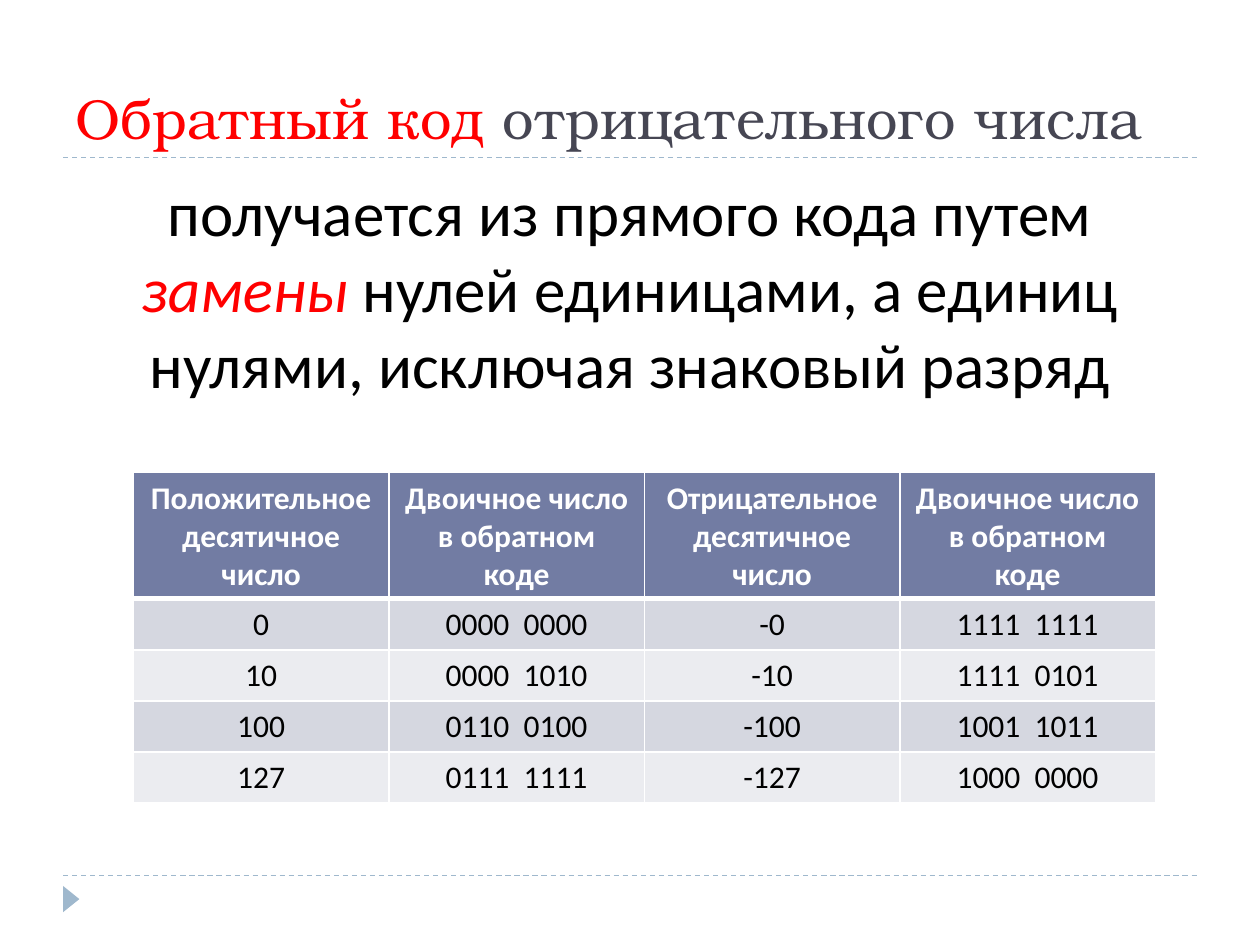
from dataclasses import dataclass

from lxml.etree import SubElement
from pptx import Presentation
from pptx.dml.color import RGBColor
from pptx.enum.dml import MSO_LINE
from pptx.enum.shapes import MSO_CONNECTOR, MSO_SHAPE
from pptx.enum.text import MSO_ANCHOR, MSO_AUTO_SIZE, PP_ALIGN
from pptx.oxml.ns import qn
from pptx.util import Cm, Pt


@dataclass(frozen=True)
class Theme:
    title_font: str = "TeX Gyre Bonum"
    body_font: str = "Calibri"
    title_size: int = 32
    body_size: int = 36
    table_size: int = 18
    title: str = "464653"
    text: str = "000000"
    accent: str = "FF0000"
    rule: str = "9FB8CD"
    header: str = "727CA3"
    bands: tuple = ("D5D7E0", "EBECF0")
    white: str = "FFFFFF"


THEME = Theme()
LEFT, WIDTH = 1.27, 22.86

HEADERS = [
    "Положительное десятичное число",
    "Двоичное число в обратном коде",
    "Отрицательное десятичное число",
    "Двоичное число в обратном коде",
]
ROWS = [
    ["0", "0000  0000", "-0", "1111  1111"],
    ["10", "0000  1010", "-10", "1111  0101"],
    ["100", "0110  0100", "-100", "1001  1011"],
    ["127", "0111  1111", "-127", "1000  0000"],
]


def add_text(p, text, *, size, color=THEME.text, font=THEME.body_font,
             bold=False, italic=False):
    r = p.add_run()
    r.text = text
    r.font.name = font
    r.font.size = Pt(size)
    r.font.bold = bold
    r.font.italic = italic
    r.font.color.rgb = RGBColor.from_string(color)


def set_fill(fill, color):
    fill.solid()
    fill.fore_color.rgb = RGBColor.from_string(color)


def add_rule(slide, y):
    """Draw a dashed horizontal line across the content width."""
    line = slide.shapes.add_connector(
        MSO_CONNECTOR.STRAIGHT, Cm(LEFT), Cm(y), Cm(LEFT + WIDTH), Cm(y))
    line.line.color.rgb = RGBColor.from_string(THEME.rule)
    line.line.width = Pt(0.75)
    line.line.dash_style = MSO_LINE.DASH
    SubElement(line._element.spPr, qn("a:effectLst"))


def add_marker(slide):
    sp = slide.shapes.add_shape(
        MSO_SHAPE.ISOSCELES_TRIANGLE, Cm(1.17), Cm(17.96), Cm(0.53), Cm(0.33))
    sp.rotation = 90
    sp.shadow.inherit = False
    set_fill(sp.fill, THEME.rule)
    sp.line.fill.background()


def add_title(slide):
    sp = slide.shapes.title
    sp.left, sp.top, sp.width, sp.height = Cm(LEFT), Cm(0.43), Cm(WIDTH), Cm(2.74)
    tf = sp.text_frame
    tf.auto_size = MSO_AUTO_SIZE.NONE
    tf.vertical_anchor = MSO_ANCHOR.BOTTOM
    p = tf.paragraphs[0]
    p.alignment = PP_ALIGN.LEFT
    for text, color in (("Обратный код ", THEME.accent),
                        ("отрицательного числа", THEME.title)):
        add_text(p, text, size=THEME.title_size, color=color, font=THEME.title_font)


def add_definition(slide):
    sp = slide.shapes.add_textbox(Cm(LEFT), Cm(3.38), Cm(WIDTH), Cm(13.72))
    tf = sp.text_frame
    tf.word_wrap = True
    p = tf.paragraphs[0]
    p.alignment = PP_ALIGN.CENTER
    p.space_before = Pt(6)
    size = THEME.body_size
    add_text(p, "получается из прямого кода путем ", size=size)
    add_text(p, "замены", size=size, color=THEME.accent, italic=True)
    add_text(p, " нулей единицами, а единиц нулями, исключая знаковый разряд",
             size=size)


def set_borders(cell, bottom=1, top=1):
    tc_pr = cell._tc.get_or_add_tcPr()
    for side, width in (("L", 1), ("R", 1), ("T", top), ("B", bottom)):
        ln = SubElement(tc_pr, qn(f"a:ln{side}"), w=str(Pt(width)))
        fill = SubElement(ln, qn("a:solidFill"))
        SubElement(fill, qn("a:srgbClr"), val=THEME.white)


def add_code_table(slide):
    data = [HEADERS, *ROWS]
    header_height, row_height, col_width = 2.54, 1.03, 5.15
    table = slide.shapes.add_table(
        len(data), len(HEADERS), Cm(2.69), Cm(9.53), Cm(col_width * len(HEADERS)),
        Cm(header_height + row_height * len(ROWS))).table
    for col in table.columns:
        col.width = Cm(col_width)
    for i, values in enumerate(data):
        is_header = i == 0
        table.rows[i].height = Cm(header_height if is_header else row_height)
        for j, text in enumerate(values):
            cell = table.cell(i, j)
            set_borders(cell, bottom=3 if is_header else 1, top=3 if i == 1 else 1)
            set_fill(cell.fill, THEME.header if is_header else THEME.bands[(i - 1) % 2])
            p = cell.text_frame.paragraphs[0]
            p.alignment = PP_ALIGN.CENTER
            add_text(p, text, size=THEME.table_size, bold=is_header,
                     color=THEME.white if is_header else THEME.text)


def main():
    prs = Presentation()
    prs.slide_width, prs.slide_height = Cm(25.4), Cm(19.05)
    slide = prs.slides.add_slide(prs.slide_layouts[5])
    for y in (17.65, 3.18):
        add_rule(slide, y)
    add_marker(slide)
    add_title(slide)
    add_definition(slide)
    add_code_table(slide)
    prs.save("out.pptx")


if __name__ == "__main__":
    main()
